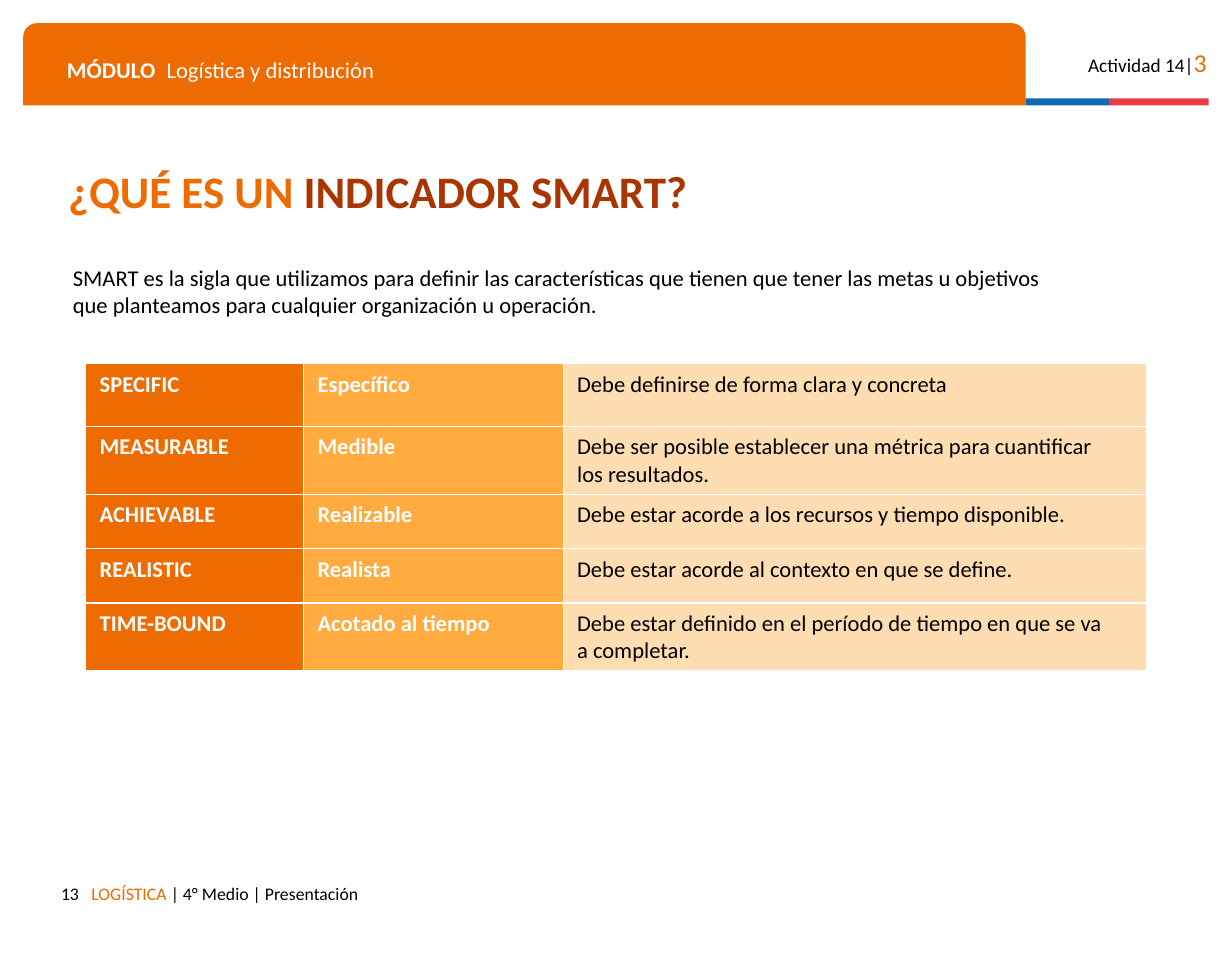
from lxml.etree import SubElement
from pptx import Presentation
from pptx.dml.color import RGBColor
from pptx.enum.shapes import MSO_SHAPE
from pptx.enum.text import MSO_ANCHOR, PP_ALIGN
from pptx.oxml.ns import qn
from pptx.util import Inches, Pt

COLORS = {
    "orange": "ED6B00",
    "amber": "FFAB40",
    "peach": "FFDDB2",
    "rust": "A93501",
    "blue": "0F69B4",
    "red": "EB3C46",
    "white": "FFFFFF",
    "black": "000000",
}
SMART_ROWS = [
    ("SPECIFIC", "Específico", "Debe definirse de forma clara y concreta"),
    ("MEASURABLE", "Medible",
     "Debe ser posible establecer una métrica para cuantificar\nlos resultados."),
    ("ACHIEVABLE", "Realizable", "Debe estar acorde a los recursos y tiempo disponible."),
    ("REALISTIC", "Realista", "Debe estar acorde al contexto en que se define."),
    ("TIME-BOUND", "Acotado al tiempo",
     "Debe estar definido en el período de tiempo en que se va\na completar."),
]
SMART_COLUMNS = [
    (1.88, "orange", "white", True),
    (2.24, "amber", "white", True),
    (5.03, "peach", "black", False),
]
ROW_HEIGHTS = [0.54] + [0.47] * 4


def color(name):
    return RGBColor.from_string(COLORS[name])


def apply(target, values):
    for name, value in values.items():
        setattr(target, name, value)


def add_span(para, text, size, color_name, bold=False):
    for index, line in enumerate(text.split("\n")):
        if index:
            para.add_line_break()
        span = para.add_run()
        span.text = line
        apply(span.font, {"name": "Calibri", "size": Pt(size), "bold": bold})
        span.font.color.rgb = color(color_name)


def set_margins(holder, side, vertical):
    apply(holder, {
        "margin_left": Inches(side),
        "margin_right": Inches(side),
        "margin_top": Inches(vertical),
        "margin_bottom": Inches(vertical),
    })


def add_bar(page, kind, place, color_name):
    bar = page.shapes.add_shape(kind, *map(Inches, place))
    bar.shadow.inherit = False
    bar.fill.solid()
    bar.fill.fore_color.rgb = color(color_name)
    bar.line.fill.background()
    return bar


def add_text(page, place, spans, vertical=0.1, anchor=MSO_ANCHOR.TOP, **para_format):
    frame = page.shapes.add_textbox(*map(Inches, place)).text_frame
    apply(frame, {"word_wrap": True, "vertical_anchor": anchor})
    set_margins(frame, 0.1, vertical)
    para = frame.paragraphs[0]
    apply(para, para_format)
    for span in spans:
        add_span(para, *span)
    return para


def add_tab_stop(para, position):
    stops = SubElement(para._p.get_or_add_pPr(), qn("a:tabLst"))
    SubElement(stops, qn("a:tab"), pos=str(Inches(position)), algn="l")


def add_borders(cell):
    properties = cell._tc.get_or_add_tcPr()
    for side in ("lnL", "lnR", "lnT", "lnB"):
        line = SubElement(properties, qn(f"a:{side}"), w=str(Pt(1)))
        fill = SubElement(line, qn("a:solidFill"))
        SubElement(fill, qn("a:srgbClr"), val=COLORS["white"])


def add_smart_table(page):
    width = sum(column[0] for column in SMART_COLUMNS)
    table = page.shapes.add_table(
        len(SMART_ROWS), len(SMART_COLUMNS),
        Inches(0.74), Inches(3.14), Inches(width), Inches(sum(ROW_HEIGHTS)),
    ).table
    apply(table, {"first_row": False, "horz_banding": False})
    for row, height in zip(table.rows, ROW_HEIGHTS):
        row.height = Inches(height)
    for column_index, (width, fill, ink, bold) in enumerate(SMART_COLUMNS):
        table.columns[column_index].width = Inches(width)
        for row_index, texts in enumerate(SMART_ROWS):
            cell = table.cell(row_index, column_index)
            set_margins(cell, 0.12, 0.06)
            add_borders(cell)
            cell.fill.solid()
            cell.fill.fore_color.rgb = color(fill)
            add_span(cell.text_frame.paragraphs[0], texts[column_index], 14, ink, bold)


def add_header(page):
    banner = add_bar(page, MSO_SHAPE.ROUND_2_SAME_RECTANGLE, (0.2, 0.2, 8.65, 0.71), "orange")
    banner.adjustments[0] = 0.167
    add_bar(page, MSO_SHAPE.RECTANGLE, (8.85, 0.85, 0.72, 0.06), "blue")
    add_bar(page, MSO_SHAPE.RECTANGLE, (9.57, 0.85, 0.86, 0.06), "red")
    module = add_text(page, (0.48, 0.38, 8.14, 0.35), [
        ("MÓDULO", 14, "white", True),
        ("\tLogística y distribución", 14, "white"),
    ])
    add_tab_stop(module, 0.86)
    add_text(page, (9.23, 0.3, 1.28, 0.38), [
        ("Actividad 14|", 12, "black"),
        ("3", 16, "orange"),
    ], alignment=PP_ALIGN.RIGHT)


def add_footer(page):
    add_text(page, (0.2, 7.53, 0.58, 0.29), [("13", 11, "black")], alignment=PP_ALIGN.RIGHT)
    add_text(page, (0.69, 7.53, 7.14, 0.38), [
        ("LOGÍSTICA ", 11, "orange"),
        ("| 4° Medio | Presentación", 11, "black"),
    ])


def main():
    deck = Presentation()
    apply(deck, {"slide_width": Inches(10.63), "slide_height": Inches(8.27)})
    page = deck.slides.add_slide(deck.slide_layouts[6])
    add_header(page)
    add_footer(page)
    add_text(page, (0.49, 1.51, 9.79, 0.35), [
        ("¿QUÉ ES UN ", 28, "orange", True),
        ("INDICADOR SMART?", 28, "rust", True),
    ], anchor=MSO_ANCHOR.MIDDLE, line_spacing=0.8)
    add_text(page, (0.53, 2.23, 8.58, 0.81), [
        ("SMART es la sigla que utilizamos para definir las características que tienen que "
         "tener las metas u objetivos que planteamos para cualquier organización u operación.",
         14, "black"),
    ], vertical=0.05)
    add_smart_table(page)
    deck.save("out.pptx")


if __name__ == "__main__":
    main()
